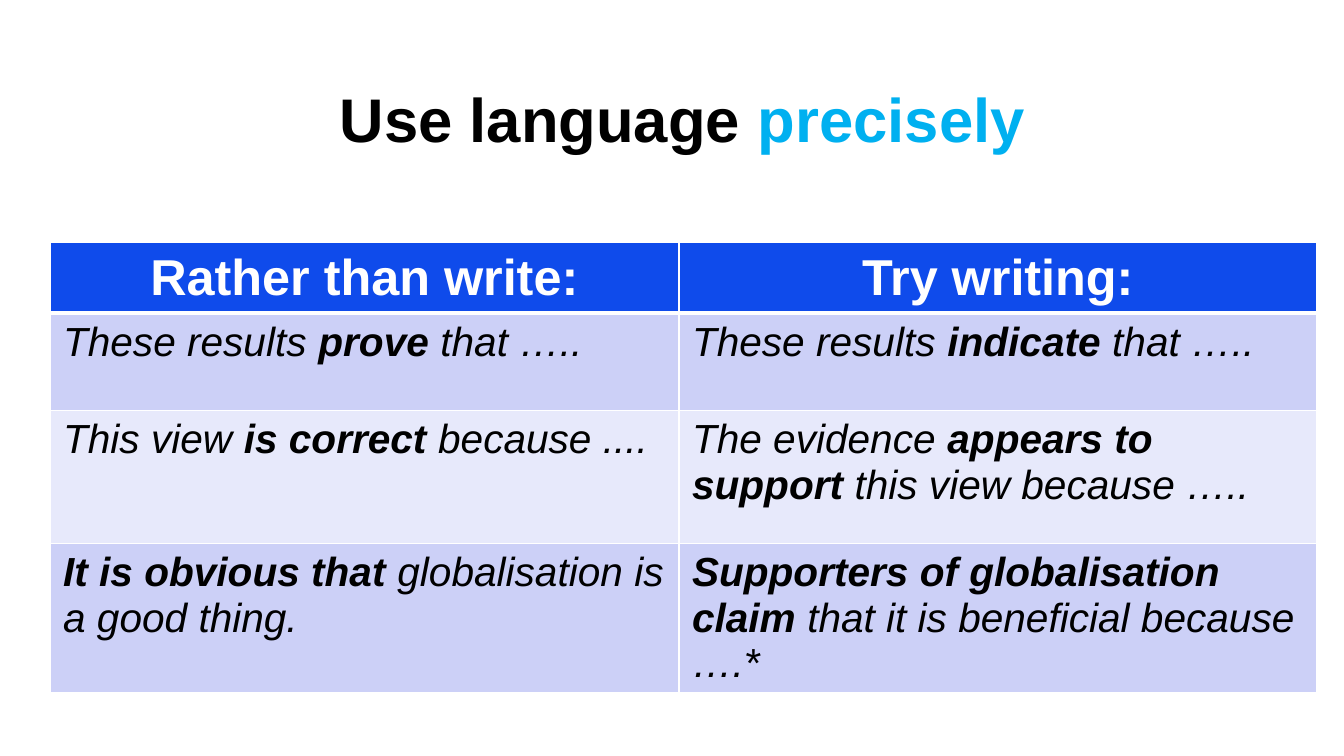
from pptx import Presentation
from pptx.dml.color import RGBColor as RGB
from pptx.enum.text import MSO_ANCHOR as Anchor, PP_ALIGN as Align
from pptx.oxml import parse_xml
from pptx.oxml.ns import nsdecls
from pptx.util import Cm, Pt

hues = {
    "black": "000000",
    "white": "FFFFFF",
    "sky": "00B0F0",
    "blue": "0F4BEB",
    "dark": "CCD0F7",
    "pale": "E7E9FB",
}


def write(para, parts, size, slant=False):
    for text, bold, hue in parts:
        run = para.add_run()
        run.text = text
        font = run.font
        font.name = "Arial"
        font.size = Pt(size)
        font.bold = bold
        font.italic = slant
        font.color.rgb = RGB.from_string(hues[hue])


def edge(cell, side, width):
    cell._tc.get_or_add_tcPr().append(parse_xml(
        f'<a:{side} {nsdecls("a")} w="{Pt(width)}"><a:solidFill>'
        f'<a:srgbClr val="{hues["white"]}"/></a:solidFill></a:{side}>'))


deck = Presentation()
deck.slide_width = Cm(33.87)
deck.slide_height = Cm(19.05)
slide = deck.slides.add_slide(deck.slide_layouts[5])

title = slide.shapes.title
title.left, title.top = Cm(1.6), Cm(1.17)
title.width, title.height = Cm(31.2), Cm(3.86)
frame = title.text_frame
frame.word_wrap = True
frame.vertical_anchor = Anchor.MIDDLE
head = frame.paragraphs[0]
head.alignment = Align.CENTER
head.line_spacing = 0.9
write(head, [("Use language ", True, "black"), ("precisely", True, "sky")], 44)

rows = [
    [[("Rather than write:", True)], [("Try writing:", True)]],
    [[("These results ", False), ("prove", True), (" that …..", False)],
     [("These results ", False), ("indicate", True), (" that …..", False)]],
    [[("This view ", False), ("is correct ", True), ("because ....", False)],
     [("The evidence ", False), ("appears to support ", True),
      ("this view because …..", False)]],
    [[("It is obvious that ", True), ("globalisation is a good thing.", False)],
     [("Supporters of globalisation claim ", True),
      ("that it is beneficial because ….*", False)]],
]
wide = [15.85, 16.08]
tall = [1.75, 2.46, 3.35, 3.77]
fills = ["blue", "dark", "pale", "dark"]

grid = slide.shapes.add_table(
    len(rows), len(wide), Cm(1.26), Cm(6.12), Cm(sum(wide)), Cm(sum(tall))).table
for col, width in zip(grid.columns, wide):
    col.width = Cm(width)
for r, row in enumerate(rows):
    grid.rows[r].height = Cm(tall[r])
    top = r == 0
    for c, parts in enumerate(row):
        cell = grid.cell(r, c)
        cell.margin_left = cell.margin_right = Cm(0.33)
        cell.margin_top = cell.margin_bottom = Cm(0.17)
        for side in ("lnL", "lnR", "lnT", "lnB"):
            thick = (r, side) in [(0, "lnB"), (1, "lnT")]
            edge(cell, side, 3 if thick else 1)
        cell.fill.solid()
        cell.fill.fore_color.rgb = RGB.from_string(hues[fills[r]])
        para = cell.text_frame.paragraphs[0]
        para.alignment = Align.CENTER if top else Align.LEFT
        hue = "white" if top else "black"
        write(para, [(text, bold, hue) for text, bold in parts],
              36 if top else 29, not top)

deck.save("out.pptx")
